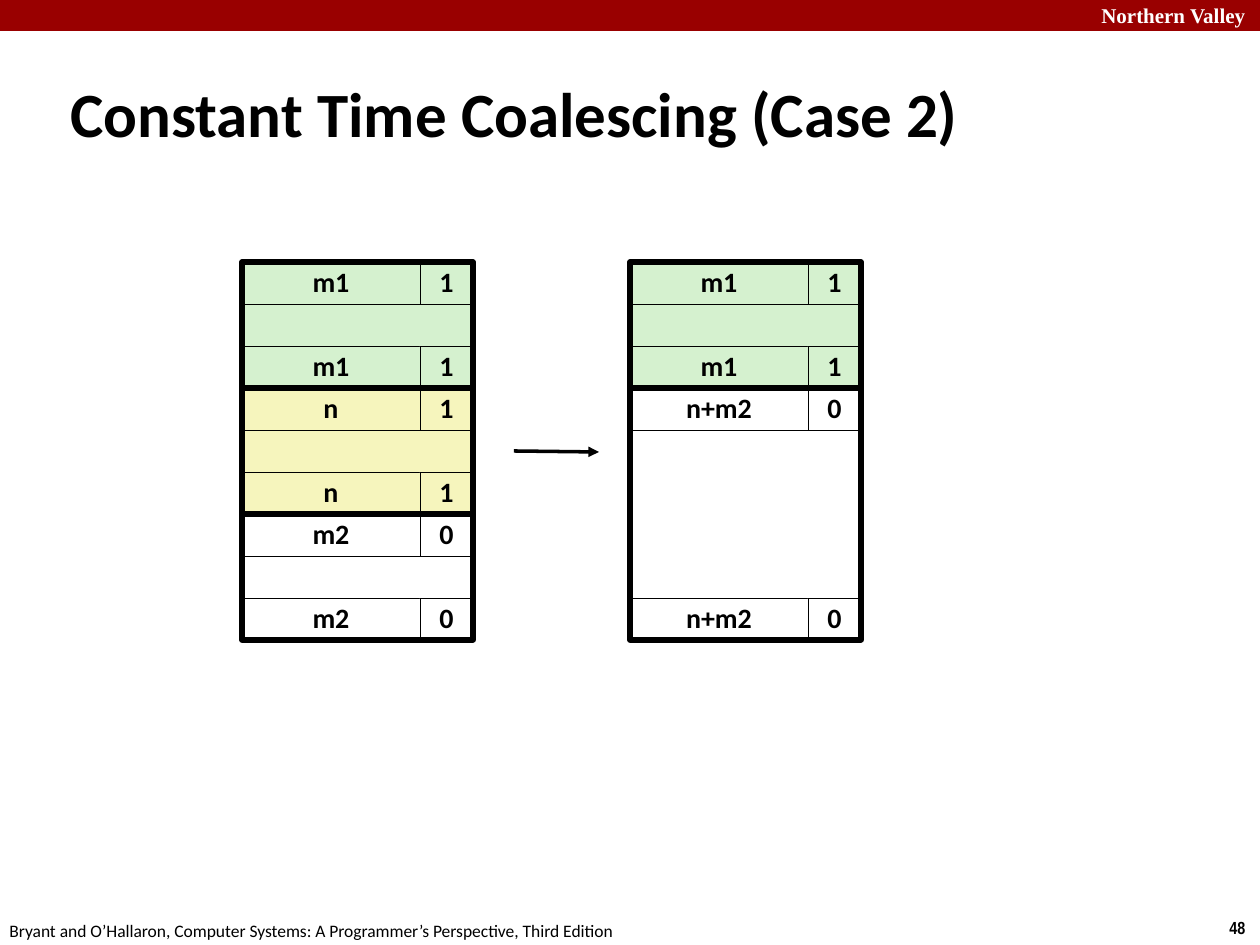
from lxml.etree import SubElement
from pptx import Presentation
from pptx.dml.color import RGBColor
from pptx.enum.shapes import MSO_CONNECTOR, MSO_SHAPE
from pptx.enum.text import MSO_ANCHOR, PP_ALIGN
from pptx.oxml.ns import qn
from pptx.util import Pt

PX = 914400 // 126
HUES = {"red": "990000", "green": "D5F1CF", "yellow": "F6F5BD",
        "white": "FFFFFF", "black": "000000"}
TITLE = "Constant Time Coalescing (Case 2)"
SCHOOL = "Northern Valley"
BOOK = "Bryant and O’Hallaron, Computer Systems: A Programmer’s Perspective, Third Edition"
PAGE = "48"

# label, flag, hue, rows
STACKS = [
    (242, [("m1", "1", "green", 3), ("n", "1", "yellow", 3), ("m2", "0", "white", 3)]),
    (630, [("m1", "1", "green", 3), ("n+m2", "0", "white", 6)]),
]
TOP, ROW, WIDE, FLAG = 262, 42, 231, 53
ARROW = (514, 451, 599, 452)


def color(name):
    return RGBColor.from_string(HUES[name])


def write(shape, text, size=16, font="Calibri", hue="black", bold=True,
          align=PP_ALIGN.LEFT, anchor=MSO_ANCHOR.TOP, wrap=False, space=None):
    frame = shape.text_frame
    frame.word_wrap = wrap
    frame.vertical_anchor = anchor
    para = frame.paragraphs[0]
    para.alignment = align
    para.line_spacing = space
    run = para.add_run()
    run.text = text
    run.font.size = Pt(size)
    run.font.name = font
    run.font.bold = bold
    run.font.color.rgb = color(hue)


def label(slide, text, box, **style):
    write(slide.shapes.add_textbox(*(n * PX for n in box)), text, **style)


def rect(slide, box, fill=None, line=0.25):
    shape = slide.shapes.add_shape(MSO_SHAPE.RECTANGLE, *(n * PX for n in box))
    shape.shadow.inherit = False
    if fill:
        shape.fill.solid()
        shape.fill.fore_color.rgb = color(fill)
    else:
        shape.fill.background()
    if line:
        shape.line.color.rgb = color("black")
        shape.line.width = Pt(line)
    else:
        shape.line.fill.background()
    return shape


def block(slide, left, top, name, flag, hue, rows):
    rect(slide, (left, top + ROW, WIDE, (rows - 2) * ROW), hue)
    split = WIDE - FLAG
    for y in (top, top + (rows - 1) * ROW):
        for text, x, width in ((name, left, split), (flag, left + split, FLAG)):
            cell = rect(slide, (x, y, width, ROW), hue)
            write(cell, text, align=PP_ALIGN.CENTER, anchor=MSO_ANCHOR.MIDDLE, space=0.98)
    rect(slide, (left, top, WIDE, rows * ROW), line=3)


def arrow(slide, ends):
    line = slide.shapes.add_connector(MSO_CONNECTOR.STRAIGHT, *(n * PX for n in ends))
    line.line.color.rgb = color("black")
    line.line.width = Pt(2)
    SubElement(line.line._get_or_add_ln(), qn("a:tailEnd"), type="triangle")
    SubElement(line._element.spPr, qn("a:effectLst"))


def main():
    deck = Presentation()
    deck.slide_width, deck.slide_height = 1260 * PX, 945 * PX
    slide = deck.slides.add_slide(deck.slide_layouts[6])
    rect(slide, (0, 0, 1260, 31), "red", line=0)
    label(slide, SCHOOL, (1089, -4, 180, 38), size=12, font="Times New Roman", hue="white")
    label(slide, PAGE, (1217, 911, 43, 34), size=10, font="Arial Narrow")
    label(slide, BOOK, (-3, 914, 640, 34), size=10, bold=False)
    label(slide, TITLE, (58, 73, 1144, 79), size=36, anchor=MSO_ANCHOR.MIDDLE, wrap=True)
    for left, blocks in STACKS:
        top = TOP
        for name, flag, hue, rows in blocks:
            block(slide, left, top, name, flag, hue, rows)
            top += rows * ROW
    arrow(slide, ARROW)
    deck.save("out.pptx")


if __name__ == "__main__":
    main()
